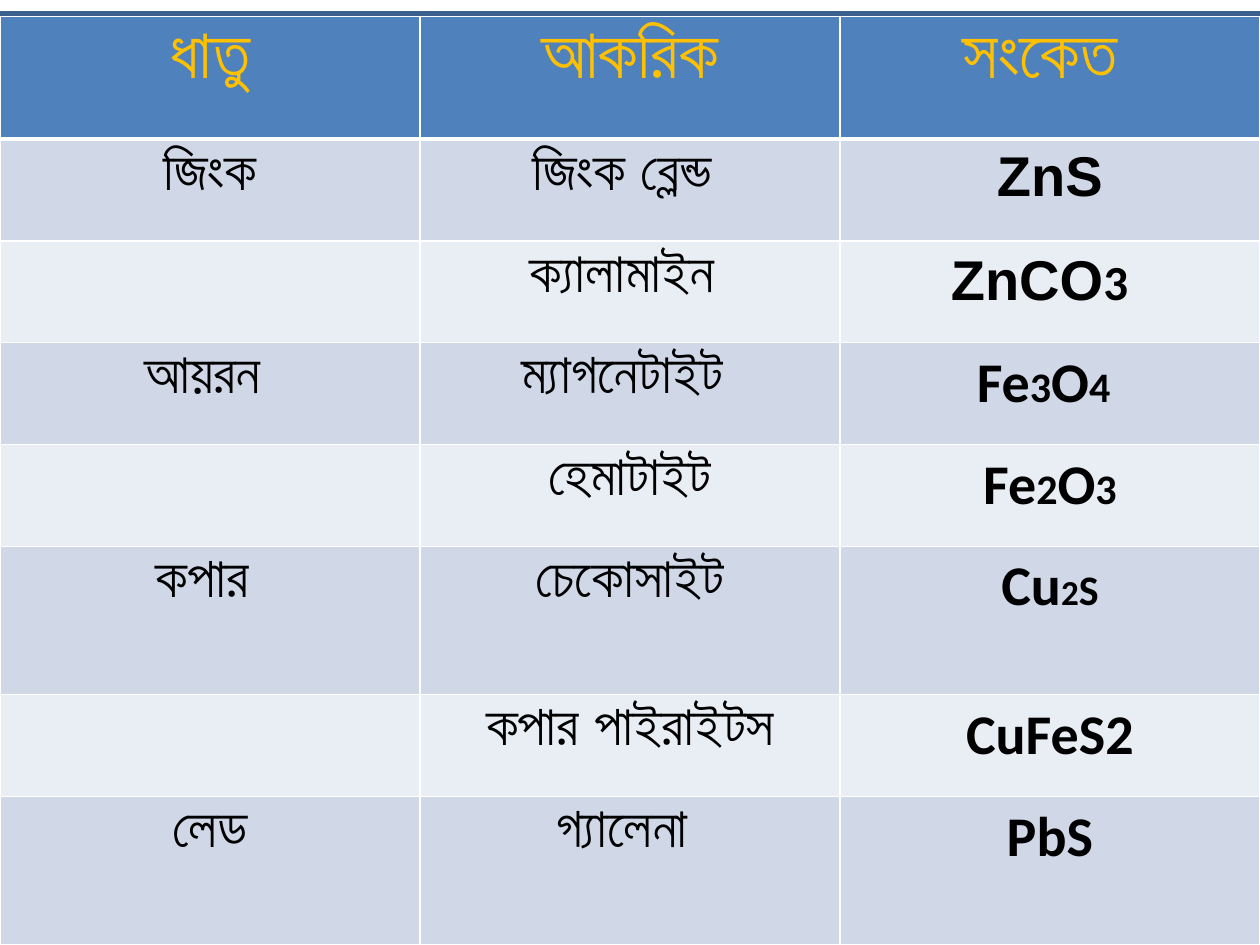
from lxml.etree import SubElement
from pptx import Presentation
from pptx.dml.color import RGBColor
from pptx.enum.shapes import MSO_SHAPE
from pptx.enum.text import PP_ALIGN
from pptx.oxml.ns import qn
from pptx.util import Pt

WHITE = RGBColor(0xFF, 0xFF, 0xFF)
BLACK = RGBColor(0x00, 0x00, 0x00)
GOLD = RGBColor(0xFF, 0xC0, 0x00)
HEADER_BLUE = RGBColor(0x4F, 0x81, 0xBD)
FRAME_BLUE = RGBColor(0x3A, 0x5F, 0x8C)
BANDS = (RGBColor(0xD0, 0xD8, 0xE8), RGBColor(0xE9, 0xED, 0xF4))

SLIDE_WIDTH, SLIDE_HEIGHT = 720, 540
TABLE_TOP = 9.4
HEADER_HEIGHT, ROW_HEIGHT, TALL_ROW_HEIGHT = 70, 58.2, 84.8
TALL_ROWS = (5, 7)
HEADER_SIZE, BODY_SIZE = 40, 32

# A formula is a font and its runs: (text, size).
ORES = [
    ("ধাতু", "আকরিক", "সংকেত "),
    ("জিংক", "জিংক ব্লেন্ড ", [("ZnS", 32, "Arial")]),
    ("", "ক্যালামাইন ", [("ZnCO", 32, "Arial"), ("3", 28, "Calibri"),
                         (" ", 20, "Calibri"), (" ", 32, "Calibri")]),
    ("আয়রন ", "ম্যাগনেটাইট ", [("Fe", 32, "Calibri"), ("3", 24, "Calibri"),
                                ("O", 32, "Calibri"), ("4", 24, "Calibri"),
                                (" ", 32, "Calibri")]),
    ("", "হেমাটাইট", [("Fe", 32, "Calibri"), ("2", 24, "Calibri"),
                      ("O", 32, "Calibri"), ("3", 24, "Calibri")]),
    ("কপার ", "চেকোসাইট", [("Cu", 32, "Calibri"), ("2", 20, "Calibri"),
                           ("S", 24, "Calibri")]),
    ("", "কপার পাইরাইটস", [("CuFeS2", 32, "Calibri")]),
    ("লেড", "গ্যালেনা ", [("PbS", 32, "Calibri")]),
]


class SlideBuilder:
    def __init__(self, slide, font="Arial"):
        self.slide = slide
        self.font = font

    def frame(self, left, top, width, height, color, weight):
        shape = self.slide.shapes.add_shape(
            MSO_SHAPE.RECTANGLE, Pt(left), Pt(top), Pt(width), Pt(height))
        shape.shadow.inherit = False
        shape.fill.background()
        shape.line.color.rgb = color
        shape.line.width = Pt(weight)

    def table(self, left, top, width, heights, rows):
        column_count = len(rows[0])
        table = self.slide.shapes.add_table(
            len(rows), column_count,
            Pt(left), Pt(top), Pt(width), Pt(sum(heights))).table
        for column in table.columns:
            column.width = Pt(width / column_count)
        for row_index, (height, row) in enumerate(zip(heights, rows)):
            table.rows[row_index].height = Pt(height)
            is_header = row_index == 0
            fill = HEADER_BLUE if is_header else BANDS[(row_index - 1) % 2]
            borders = {"lnL": 1, "lnR": 1,
                       "lnT": 3 if row_index == 1 else 1,
                       "lnB": 3 if is_header else 1}
            for column_index, content in enumerate(row):
                cell = table.cell(row_index, column_index)
                self.borders(cell, borders)
                cell.fill.solid()
                cell.fill.fore_color.rgb = fill
                if content:
                    self.text(cell, content,
                              HEADER_SIZE if is_header else BODY_SIZE,
                              GOLD if is_header else BLACK)

    def borders(self, cell, weights):
        """Draw white cell borders; call before the fill, as the schema orders."""
        properties = cell._tc.get_or_add_tcPr()
        for tag, weight in weights.items():
            line = SubElement(properties, qn(f"a:{tag}"), w=str(Pt(weight)))
            fill = SubElement(line, qn("a:solidFill"))
            SubElement(fill, qn("a:srgbClr"), val=str(WHITE))

    def text(self, cell, content, size, color):
        """Write a plain string or a list of (text, size, font) runs."""
        runs = [(content, size, self.font)] if isinstance(content, str) else content
        paragraph = cell.text_frame.paragraphs[0]
        paragraph.alignment = PP_ALIGN.CENTER
        for text, run_size, font in runs:
            run = paragraph.add_run()
            run.text = text
            style = {"name": font, "size": Pt(run_size), "bold": True}
            for name, value in style.items():
                setattr(run.font, name, value)
            run.font.color.rgb = color


def main():
    presentation = Presentation()
    presentation.slide_width = Pt(SLIDE_WIDTH)
    presentation.slide_height = Pt(SLIDE_HEIGHT)
    slide = presentation.slides.add_slide(presentation.slide_layouts[6])
    builder = SlideBuilder(slide)

    heights = [HEADER_HEIGHT] + [
        TALL_ROW_HEIGHT if index in TALL_ROWS else ROW_HEIGHT
        for index in range(1, len(ORES))]
    builder.frame(0, TABLE_TOP, SLIDE_WIDTH, SLIDE_HEIGHT - TABLE_TOP, FRAME_BLUE, 6)
    builder.table(0, TABLE_TOP, SLIDE_WIDTH, heights, ORES)
    presentation.save("out.pptx")


if __name__ == "__main__":
    main()
